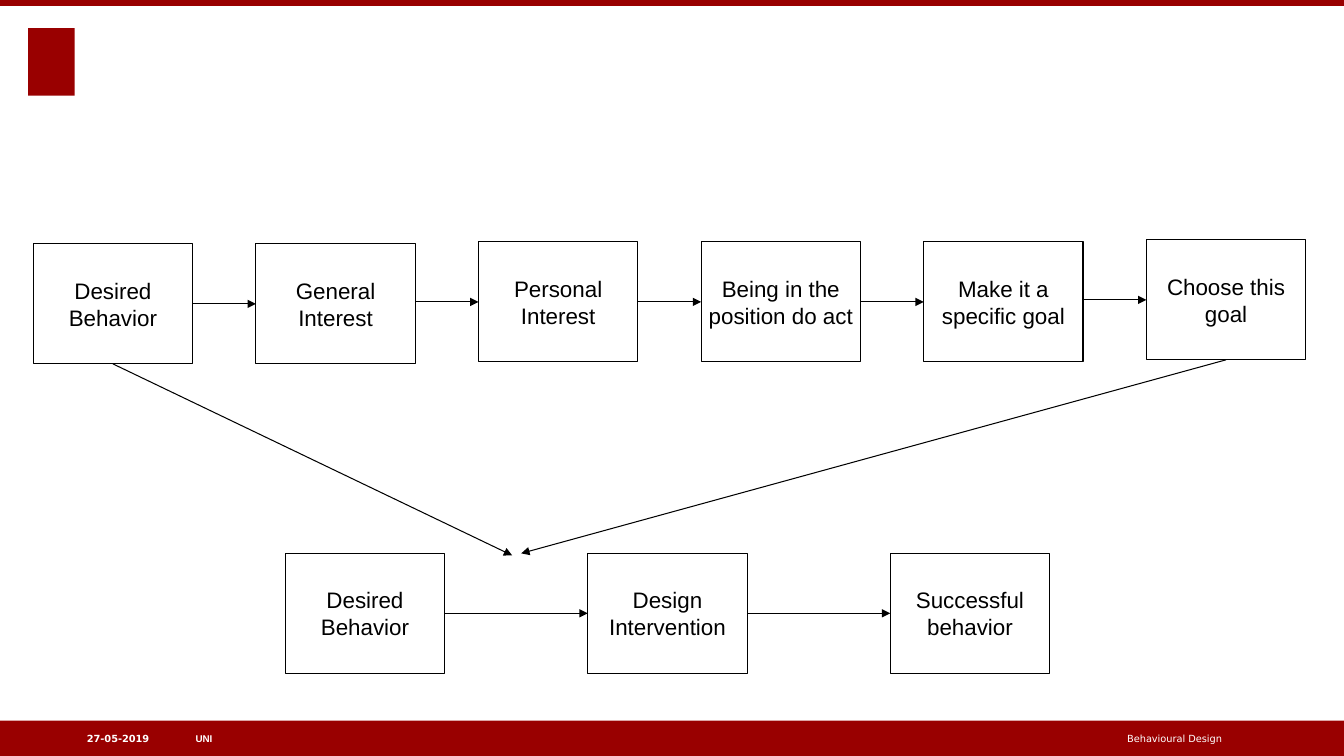
from lxml import etree
from pptx import Presentation
from pptx.dml.color import RGBColor
from pptx.enum.shapes import MSO_CONNECTOR, MSO_SHAPE
from pptx.enum.text import MSO_ANCHOR, PP_ALIGN
from pptx.oxml.ns import qn
from pptx.util import Inches, Pt

COLORS = {"red": "990000", "black": "000000", "white": "FFFFFF"}
SLIDE_WIDTH, SLIDE_HEIGHT = 13.33, 7.5
STEP_WIDTH, STEP_HEIGHT = 1.58, 1.19


def color(name):
    return RGBColor.from_string(COLORS[name])


def add_text(shape, text, size, font_name, color_name, align, bold=False):
    frame = shape.text_frame
    frame.word_wrap = True
    frame.vertical_anchor = MSO_ANCHOR.MIDDLE
    frame.margin_left = frame.margin_right = 0
    frame.margin_top = frame.margin_bottom = 0
    paragraph = frame.paragraphs[0]
    paragraph.alignment = align
    run = paragraph.add_run()
    run.text = text
    run.font.size = Pt(size)
    run.font.name = font_name
    run.font.bold = bold
    run.font.color.rgb = color(color_name)


def add_block(slide, left, top, width, height):
    """Add a red rectangle without an outline."""
    block = slide.shapes.add_shape(
        MSO_SHAPE.RECTANGLE, Inches(left), Inches(top), Inches(width), Inches(height))
    block.shadow.inherit = False
    block.fill.solid()
    block.fill.fore_color.rgb = color("red")
    block.line.fill.background()


def add_header(slide):
    add_block(slide, 0.28, 0.28, 0.46, 0.67)
    add_block(slide, 0, 0, SLIDE_WIDTH, 0.06)


def add_footer(slide, top, height):
    add_block(slide, 0, top, SLIDE_WIDTH, height)
    for left, width, text, font_name, align, bold in (
        (1.94, 3.72, "UNI", "Arial", PP_ALIGN.LEFT, True),
        (0.27, 1.21, "27-05-2019", "DejaVu Sans", PP_ALIGN.RIGHT, True),
        (6.11, 6.01, "Behavioural Design", "DejaVu Sans", PP_ALIGN.RIGHT, False),
    ):
        box = slide.shapes.add_textbox(
            Inches(left), Inches(top), Inches(width), Inches(height))
        add_text(box, text, 7, font_name, "white", align, bold)


def add_arrow(slide, start, end):
    """Add an arrow between two (x, y) points."""
    arrow = slide.shapes.add_connector(MSO_CONNECTOR.STRAIGHT, *start, *end)
    arrow.line.color.rgb = color("black")
    arrow.line.width = Pt(0.75)
    line = arrow.line._get_or_add_ln()
    etree.SubElement(line, qn("a:tailEnd"), type="triangle")
    etree.SubElement(arrow._element.spPr, qn("a:effectLst"))


def add_step(slide, text, left, top):
    step = slide.shapes.add_shape(
        MSO_SHAPE.RECTANGLE, Inches(left), Inches(top),
        Inches(STEP_WIDTH), Inches(STEP_HEIGHT))
    step.shadow.inherit = False
    step.fill.background()
    step.line.color.rgb = color("black")
    step.line.width = Pt(0.75)
    add_text(step, text, 16, "Arial", "black", PP_ALIGN.CENTER)
    return step


def add_chain(slide, left, pitch, labels_and_tops):
    """Add a row of steps joined by level arrows and return the steps."""
    steps = [add_step(slide, label, left + index * pitch, top)
             for index, (label, top) in enumerate(labels_and_tops)]
    for source, target in zip(steps, steps[1:]):
        middle = target.top + target.height // 2
        add_arrow(slide, (source.left + source.width, middle), (target.left, middle))
    return steps


def bottom_center(shape):
    return shape.left + shape.width // 2, shape.top + shape.height


def main():
    presentation = Presentation()
    presentation.slide_width = Inches(SLIDE_WIDTH)
    presentation.slide_height = Inches(SLIDE_HEIGHT)
    slide = presentation.slides.add_slide(presentation.slide_layouts[6])

    add_header(slide)
    add_footer(slide, 7.15, 0.35)
    goal_steps = add_chain(slide, 0.33, 2.208, [
        ("Desired Behavior", 2.42),
        ("General Interest", 2.42),
        ("Personal Interest", 2.4),
        ("Being in the position do act", 2.4),
        ("Make it a specific goal", 2.4),
        ("Choose this goal", 2.38),
    ])
    add_chain(slide, 2.83, 3, [
        ("Desired Behavior", 5.49),
        ("Design Intervention", 5.49),
        ("Successful behavior", 5.49),
    ])
    add_arrow(slide, bottom_center(goal_steps[0]), (Inches(5.08), Inches(5.51)))
    add_arrow(slide, bottom_center(goal_steps[-1]), (Inches(5.17), Inches(5.49)))
    presentation.save("out.pptx")


if __name__ == "__main__":
    main()
